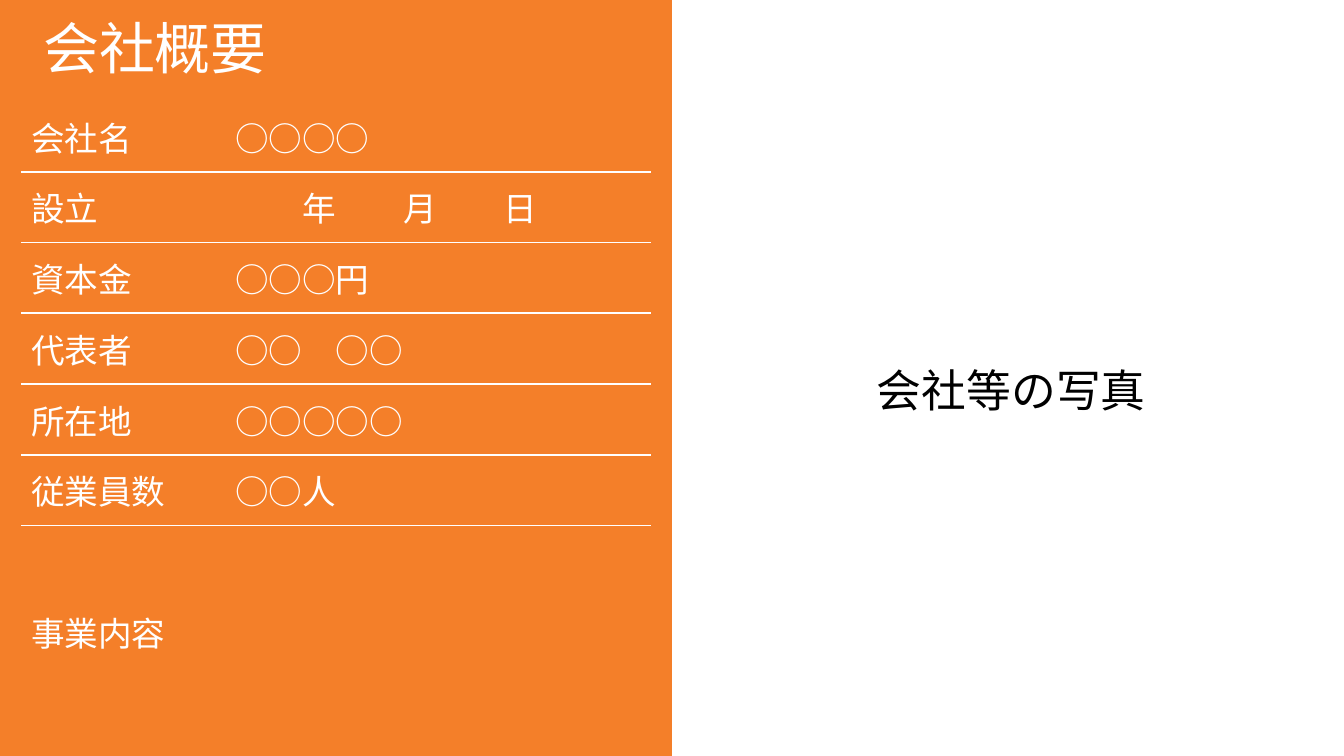
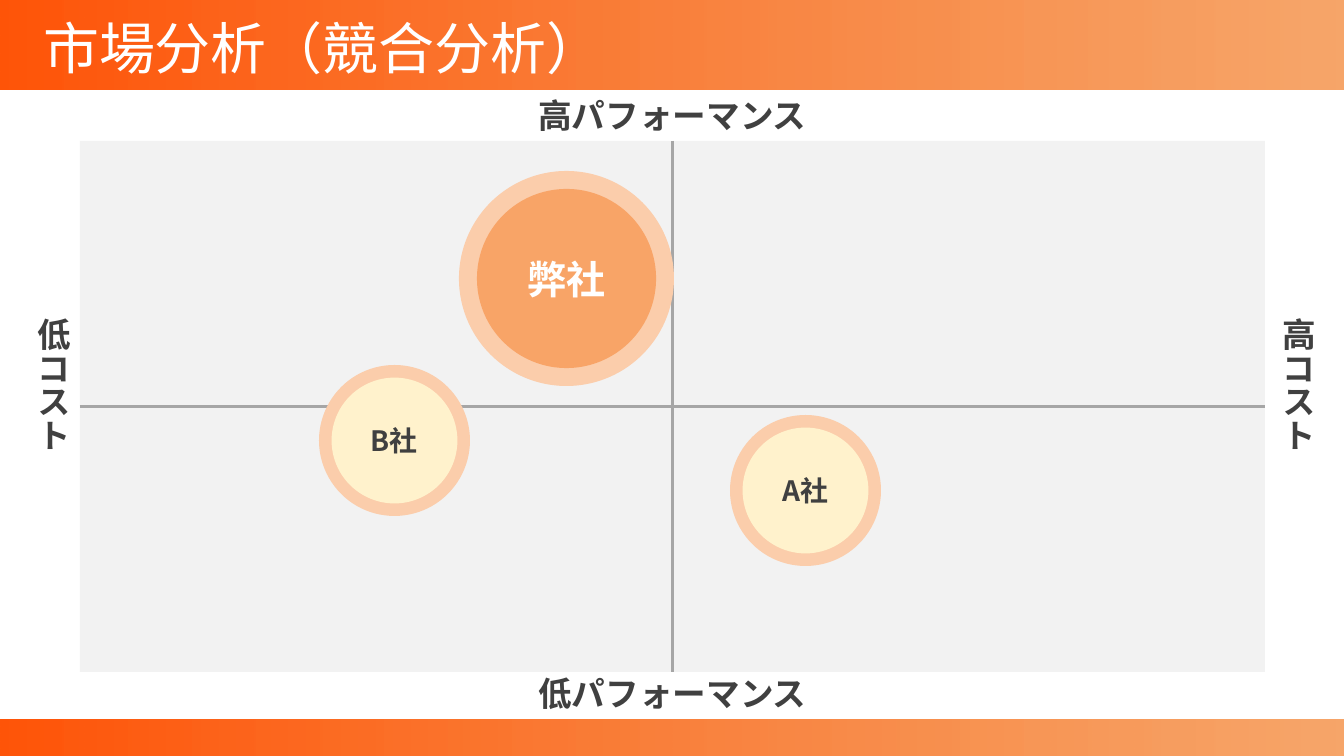
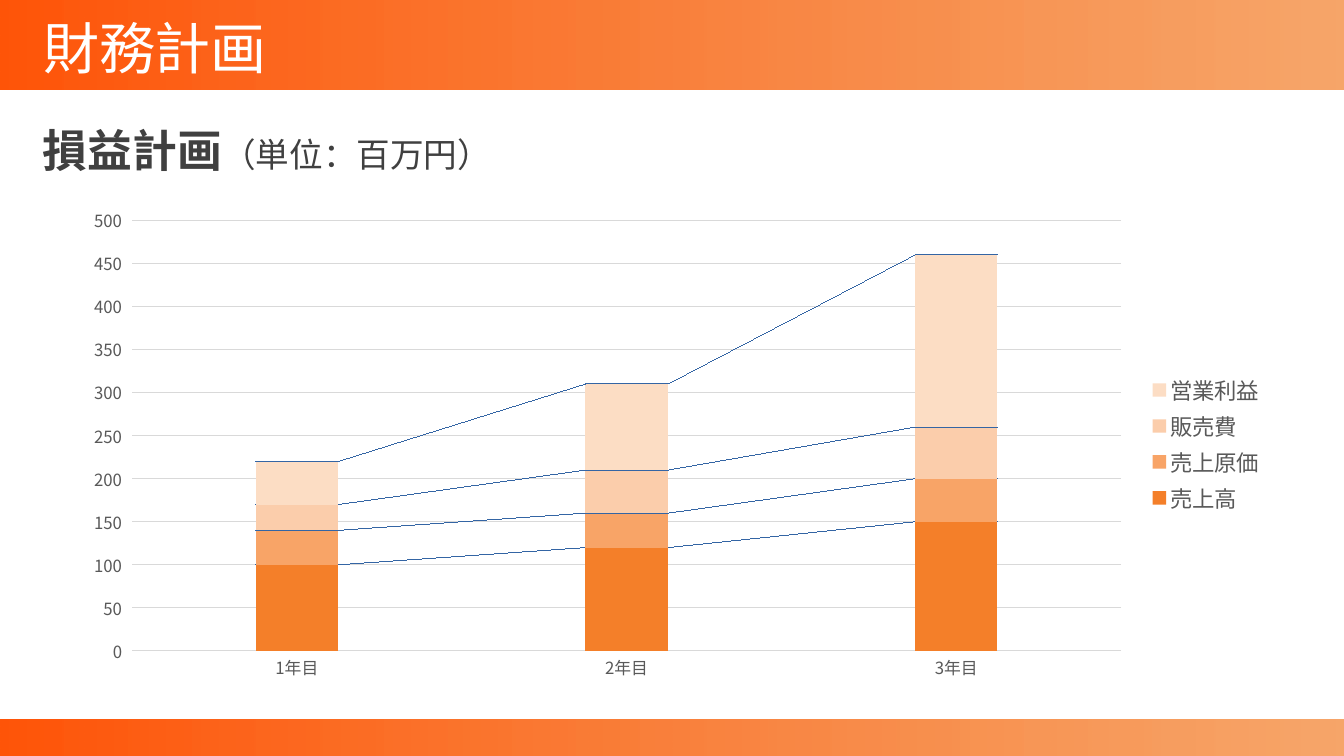
from lxml import etree
from pptx import Presentation
from pptx.chart.data import CategoryChartData
from pptx.dml.color import RGBColor
from pptx.enum.chart import XL_CHART_TYPE, XL_LEGEND_POSITION, XL_TICK_MARK
from pptx.enum.shapes import MSO_CONNECTOR, MSO_SHAPE
from pptx.enum.text import MSO_ANCHOR, MSO_AUTO_SIZE, PP_ALIGN
from pptx.oxml.ns import qn
from pptx.util import Pt

RECT, OVAL = MSO_SHAPE.RECTANGLE, MSO_SHAPE.OVAL
LINE = MSO_CONNECTOR.STRAIGHT
LEFT, CENTER = PP_ALIGN.LEFT, PP_ALIGN.CENTER
MIDDLE, TOP = MSO_ANCHOR.MIDDLE, MSO_ANCHOR.TOP
GROW = MSO_AUTO_SIZE.SHAPE_TO_FIT_TEXT
STACKED = XL_CHART_TYPE.COLUMN_STACKED
RIGHT = XL_LEGEND_POSITION.RIGHT
NO_TICK = XL_TICK_MARK.NONE

WHITE = RGBColor(0xFF, 0xFF, 0xFF)
BLACK = RGBColor(0, 0, 0)
DARK = RGBColor(0x40, 0x40, 0x40)
SLATE = RGBColor(0x59, 0x59, 0x59)
GREY = RGBColor(0xA6, 0xA6, 0xA6)
RULE = RGBColor(0xD9, 0xD9, 0xD9)
PALE = RGBColor(0xF2, 0xF2, 0xF2)
FLAME = RGBColor(0xFF, 0x55, 0x09)
ORANGE = RGBColor(0xF4, 0x7F, 0x29)
AMBER = RGBColor(0xF8, 0xA4, 0x67)
PEACH = RGBColor(0xFB, 0xCD, 0xAB)
BLUSH = RGBColor(0xFC, 0xDD, 0xC4)
CREAM = RGBColor(0xFF, 0xF2, 0xCC)

FONT = "Noto Sans CJK JP"
WIDE, HIGH = 1344, 756
SCALE = 12192000 / WIDE
TITLE_BOX = (33, 15, 1159, 73)
NO_GRID = "{2D5ABB26-0587-4C30-8999-92F81FD0307C}"

FACTS = [
    ("会社名", "○○○○"),
    ("設立", "　　年　　月　　日"),
    ("資本金", "○○○円"),
    ("代表者", "○○　○○"),
    ("所在地", "○○○○○"),
    ("従業員数", "○○人"),
    ("事業内容", ""),
]
YEARS = ["1年目", "2年目", "3年目"]
PLAN = [
    ("売上高", (100, 120, 150), ORANGE),
    ("売上原価", (40, 40, 50), AMBER),
    ("販売費", (30, 50, 60), PEACH),
    ("営業利益", (50, 100, 200), BLUSH),
]


def px(*vals):
    """Turn pixel lengths into EMU."""
    return [round(val * SCALE) for val in vals]


def style(font, size, color, bold=None):
    """Set size, colour, weight and both typefaces of a font."""
    font.size, font.bold = Pt(size), bold
    font.color.rgb = color
    font.name = FONT
    etree.SubElement(font._rPr, qn("a:ea"), typeface=FONT)


def shape(parent, kind, box, color):
    """Add a flat shape without outline."""
    item = parent.add_shape(kind, *px(*box))
    item.shadow.inherit = False
    item.fill.solid()
    item.fill.fore_color.rgb = color
    item.line.fill.background()
    return item


def label(slide, box, text, size, color, bold=None, anchor=MIDDLE,
          space=0.9, align=CENTER):
    """Add a text box with one paragraph and return it."""
    item = slide.shapes.add_textbox(*px(*box))
    frame = item.text_frame
    frame.word_wrap, frame.auto_size = True, GROW
    frame.vertical_anchor = anchor
    para = frame.paragraphs[0]
    para.text, para.alignment, para.line_spacing = text, align, space
    if text:
        style(para.font, size, color, bold)
    return item


def page(deck, layout, text):
    """Add a slide with its title and no spare placeholder."""
    slide = deck.slides.add_slide(layout)
    for spare in list(slide.placeholders)[1:]:
        spare._element.getparent().remove(spare._element)
    title = slide.shapes.title
    title.left, title.top, title.width, title.height = px(*TITLE_BOX)
    frame = title.text_frame
    frame.text = text
    frame.word_wrap, frame.auto_size = True, GROW
    frame.vertical_anchor = MIDDLE
    para = frame.paragraphs[0]
    para.alignment, para.line_spacing = LEFT, 0.9
    style(para.font, 40, WHITE)
    return slide


def bands(slide):
    """Put the top and bottom gradient bands on the slide's layout."""
    tree = slide.slide_layout.shapes._spTree
    for num, (top, tall) in enumerate([(0, 90), (720, 36)]):
        band = shape(slide.shapes, RECT, (0, top, WIDE, tall), ORANGE)
        band.fill.gradient()
        band.fill.gradient_angle = 0
        for stop, color in zip(band.fill.gradient_stops, (FLAME, ORANGE)):
            stop.color.rgb = color
        tint = band._element.spPr.findall(".//" + qn("a:srgbClr"))[-1]
        etree.SubElement(tint, qn("a:alpha"), val="70000")
        band._element.nvSpPr.cNvPr.id = 100 + num
        tree.insert(2 + num, band._element)


def border(cell):
    """Draw a white line under a table cell."""
    props = cell._tc.get_or_add_tcPr()
    line = etree.Element(qn("a:lnB"), w=str(Pt(1.5)))
    fill = etree.SubElement(line, qn("a:solidFill"))
    etree.SubElement(fill, qn("a:srgbClr"), val=str(WHITE))
    props.insert(0, line)


def facts(slide, box):
    """Add the company table, whose last row is three units tall."""
    wide, tall = box[2:]
    last = len(FACTS) - 1
    table = slide.shapes.add_table(len(FACTS), 2, *px(*box)).table
    table.first_row = table.horz_banding = False
    table._tbl.tblPr.find(qn("a:tableStyleId")).text = NO_GRID
    table.columns[0].width, table.columns[1].width = px(204, wide - 204)
    unit = tall / (last + 3)
    for row, texts in enumerate(FACTS):
        table.rows[row].height = px(unit * (3 if row == last else 1))[0]
        for col, text in enumerate(texts):
            cell = table.cell(row, col)
            cell.text = text
            cell.vertical_anchor = MIDDLE
            cell.fill.background()
            style(cell.text_frame.paragraphs[0].font, 24, WHITE)
            if row < last:
                border(cell)


def bubble(slide, box, text, size, fill, ink):
    """Add a named disc inside a pale ring."""
    left, top, wide = box
    gap = wide / 12
    group = slide.shapes.add_group_shape()
    shape(group.shapes, OVAL, (left, top, wide, wide), PEACH)
    inner = wide - 2 * gap
    disc = shape(group.shapes, OVAL, (left + gap, top + gap, inner, inner), fill)
    disc.text_frame.vertical_anchor = MIDDLE
    para = disc.text_frame.paragraphs[0]
    para.text, para.alignment = text, CENTER
    style(para.font, size, ink, True)


def matrix(slide, box):
    """Add the positioning field with its axes, labels and bubbles."""
    left, top, wide, tall = box
    field = shape(slide.shapes, RECT, box, PALE)
    for start, end in [(0, 2), (1, 3)]:
        axis = slide.shapes.add_connector(LINE, 0, 0, 0, 0)
        axis.begin_connect(field, start)
        axis.end_connect(field, end)
        axis.line.color.rgb, axis.line.width = GREY, Pt(2.25)
        etree.SubElement(axis._element.spPr, qn("a:effectLst"))
    midx, midy = left + wide // 2, top + tall // 2
    for text, edge in [("高パフォーマンス", top - 47), ("低パフォーマンス", top + tall)]:
        label(slide, (midx - 169, edge, 339, 47), text, 24, DARK, True)
    for text, edge in [("高コスト", left + wide + 2), ("低コスト", left - 58)]:
        side = label(slide, (edge, midy - 98, 58, 197), text, 24, DARK, True)
        side.text_frame._txBody.bodyPr.set("vert", "eaVert")
    bubble(slide, (left + 379, top + 30, 215), "弊社", 28, AMBER, WHITE)
    bubble(slide, (left + 650, top + 274, 151), "A社", 20, CREAM, DARK)
    bubble(slide, (left + 239, top + 224, 151), "B社", 20, CREAM, DARK)


def profit(slide, box):
    """Add the stacked profit chart with series lines."""
    data = CategoryChartData()
    data.categories = YEARS
    for name, vals, _ in PLAN:
        data.add_series(name, vals)
    chart = slide.shapes.add_chart(STACKED, *px(*box), data).chart
    chart.has_title = False
    style(chart.font, 10, BLACK)
    plot = chart.plots[0]
    plot.gap_width, plot.overlap, plot.vary_by_categories = 300, 100, False
    for series, (_, _, color) in zip(plot.series, PLAN):
        series.format.fill.solid()
        series.format.fill.fore_color.rgb = color
    lines = etree.Element(qn("c:serLines"))
    plot._element.find(qn("c:overlap")).addnext(lines)
    cats, vals = chart.category_axis, chart.value_axis
    for axis in (cats, vals):
        style(axis.tick_labels.font, 12, SLATE)
    cats.major_tick_mark = NO_TICK
    vals.minimum_scale, vals.maximum_scale, vals.major_unit = 0, 500, 50
    vals.format.line.fill.background()
    for line in (cats.format.line, vals.major_gridlines.format.line):
        line.color.rgb, line.width = RULE, Pt(0.75)
    chart.has_legend = True
    chart.legend.position = RIGHT
    chart.legend.include_in_layout = False
    style(chart.legend.font, 16, SLATE)


def company(deck, layout):
    """Build the company profile slide."""
    slide = page(deck, layout, "会社概要")
    panel = shape(slide.shapes, RECT, (0, 0, WIDE // 2, HIGH), ORANGE)
    slide.shapes._spTree.insert(2, panel._element)
    facts(slide, (21, 101, 630, 637))
    label(slide, (711, 358, 601, 65), "会社等の写真", 32, BLACK,
          anchor=TOP, space=1.0)


def market(deck, layout):
    """Build the market analysis slide."""
    slide = page(deck, layout, "市場分析（競合分析）")
    bands(slide)
    matrix(slide, (80, 141, 1185, 531))


def finance(deck, layout):
    """Build the financial plan slide."""
    slide = page(deck, layout, "財務計画")
    head = label(slide, (33, 123, 626, 60), "", 32, DARK, align=LEFT)
    para = head.text_frame.paragraphs[0]
    for text, size, bold in [("損益計画", 32, True), ("（単位：百万円）", 24, False)]:
        run = para.add_run()
        run.text = text
        style(run.font, size, DARK, bold)
    profit(slide, (70, 198, 1205, 492))


def main():
    """Build and save the deck."""
    deck = Presentation()
    deck.slide_width, deck.slide_height = px(WIDE, HIGH)
    plain, banded = deck.slide_layouts[1], deck.slide_layouts[5]
    company(deck, plain)
    market(deck, banded)
    finance(deck, banded)
    deck.save("out.pptx")


if __name__ == "__main__":
    main()
